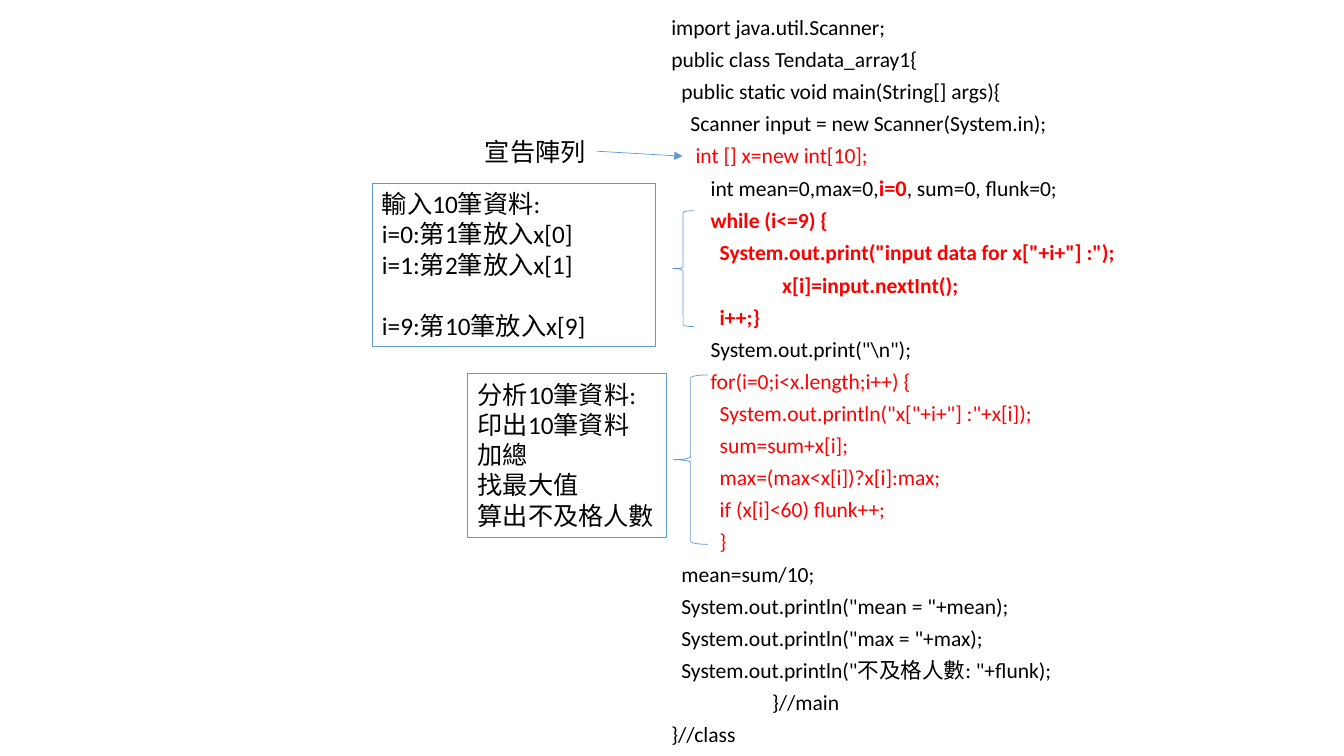
import pptx
import pptx.util
import pptx.dml.color
import pptx.enum.shapes
import pptx.enum.text
import pptx.oxml
import pptx.oxml.ns
from pptx.util import Inches

COLORS = {"text": "000000", "key": "FF0000", "line": "5B9BD5"}
FONT = "Calibri"

# Code lines: indent in inches, colour, bold, text
CODE = [
    (0, "text", False, "import java.util.Scanner;"),
    (0, "text", False, "public class Tendata_array1{"),
    (0.1, "text", False, "public static void main(String[] args){"),
    (0.19, "text", False, "Scanner input = new Scanner(System.in);"),
    (0.24, "key", False, "int [] x=new int[10];"),
    (0.39, "text", False, ["int mean=0,max=0,", "i=0", ", sum=0, flunk=0;"]),
    (0.39, "key", True, "while (i<=9) {"),
    (0.48, "key", True, 'System.out.print("input data for x["+i+"] :");'),
    (1.1, "key", True, "x[i]=input.nextInt();"),
    (0.48, "key", True, "i++;}"),
    (0.39, "text", False, 'System.out.print("\\n");'),
    (0.39, "key", False, "for(i=0;i<x.length;i++) {"),
    (0.48, "key", False, 'System.out.println("x["+i+"] :"+x[i]);'),
    (0.48, "key", False, "sum=sum+x[i];"),
    (0.48, "key", False, "max=(max<x[i])?x[i]:max;"),
    (0.48, "key", False, "if (x[i]<60) flunk++;"),
    (0.48, "key", False, "}"),
    (0.1, "text", False, "mean=sum/10;"),
    (0.1, "text", False, 'System.out.println("mean = "+mean);'),
    (0.1, "text", False, 'System.out.println("max = "+max);'),
    (0.1, "text", False, 'System.out.println("不及格人數: "+flunk);'),
    (1, "text", False, "}//main"),
    (0, "text", False, "}//class"),
]


def color(name):
    return pptx.dml.color.RGBColor.from_string(COLORS[name])


def style(font, size, color_name, bold=False):
    font.name = FONT
    font.size = pptx.util.Pt(size)
    font.bold = bold
    font.color.rgb = color(color_name)


def outline(shape, width):
    shape.line.color.rgb = color("line")
    shape.line.width = pptx.util.Pt(width)


def add_text_box(page, left, top, width, height, wrap):
    box = page.shapes.add_textbox(Inches(left), Inches(top), Inches(width), Inches(height))
    box.text_frame.word_wrap = wrap
    return box


def next_paragraph(frame, index):
    return frame.add_paragraph() if index else frame.paragraphs[0]


def add_code(page, left, top, width, height):
    frame = add_text_box(page, left, top, width, height, True).text_frame
    for index, (indent, color_name, bold, content) in enumerate(CODE):
        para = next_paragraph(frame, index)
        para.line_spacing = 0.7
        para.space_before = pptx.util.Pt(10)
        para._p.get_or_add_pPr().set("marL", str(Inches(indent)))
        if isinstance(content, str):
            para.text = content
            style(para.font, 15.4, color_name, bold)
            continue
        # The middle span of a split line is highlighted
        for position, words in enumerate(content):
            span = para.add_run()
            span.text = words
            if position == 1:
                style(span.font, 16, "key", True)
            else:
                style(span.font, 15.4, color_name, bold)


def add_note(page, left, top, width, height, lines, wrap=False, framed=True, gap_before=None):
    box = add_text_box(page, left, top, width, height, wrap)
    if framed:
        outline(box, 0.75)
    for index, words in enumerate(lines):
        para = next_paragraph(box.text_frame, index)
        para.text = words
        style(para.font, 18, "text")
        if index == gap_before:
            para.space_before = pptx.util.Pt(22)
    return box


def add_brace(page, left, top, width, height):
    brace = page.shapes.add_shape(
        pptx.enum.shapes.MSO_SHAPE.LEFT_BRACE,
        Inches(left), Inches(top), Inches(width), Inches(height))
    brace.shadow.inherit = False
    brace.fill.background()
    outline(brace, 0.5)


def add_arrow(page, source, start, end):
    arrow = page.shapes.add_connector(
        pptx.enum.shapes.MSO_CONNECTOR.STRAIGHT,
        *(Inches(value) for value in start + end))
    arrow.begin_connect(source, 3)
    outline(arrow, 0.5)
    tail = pptx.oxml.parse_xml(
        f'<a:tailEnd {pptx.oxml.ns.nsdecls("a")} type="triangle"/>')
    arrow.line._get_or_add_ln().append(tail)
    effects = pptx.oxml.parse_xml(f'<a:effectLst {pptx.oxml.ns.nsdecls("a")}/>')
    arrow._element.spPr.append(effects)


def main():
    deck = pptx.Presentation()
    deck.slide_width = Inches(13.33)
    deck.slide_height = Inches(7.5)
    page = deck.slides.add_slide(deck.slide_layouts[6])

    # Program listing
    add_code(page, 6.56, 0.16, 6.59, 7.54)

    # Input loop
    add_note(page, 3.69, 1.82, 2.81, 1.62,
             ["輸入10筆資料:", "i=0:第1筆放入x[0]", "i=1:第2筆放入x[1]", "i=9:第10筆放入x[9]"],
             wrap=True, gap_before=3)
    add_brace(page, 6.67, 2.09, 0.21, 1.15)

    # Analysis loop
    add_note(page, 4.64, 3.71, 1.97, 1.62,
             ["分析10筆資料:", "印出10筆資料", "加總", "找最大值", "算出不及格人數"])
    add_brace(page, 6.68, 3.72, 0.34, 1.68)

    # Array declaration
    label = add_note(page, 4.71, 1.3, 1.21, 0.4, ["宣告陣列"], framed=False)
    add_arrow(page, label, (5.92, 1.5), (6.77, 1.55))

    deck.save("out.pptx")


if __name__ == "__main__":
    main()
